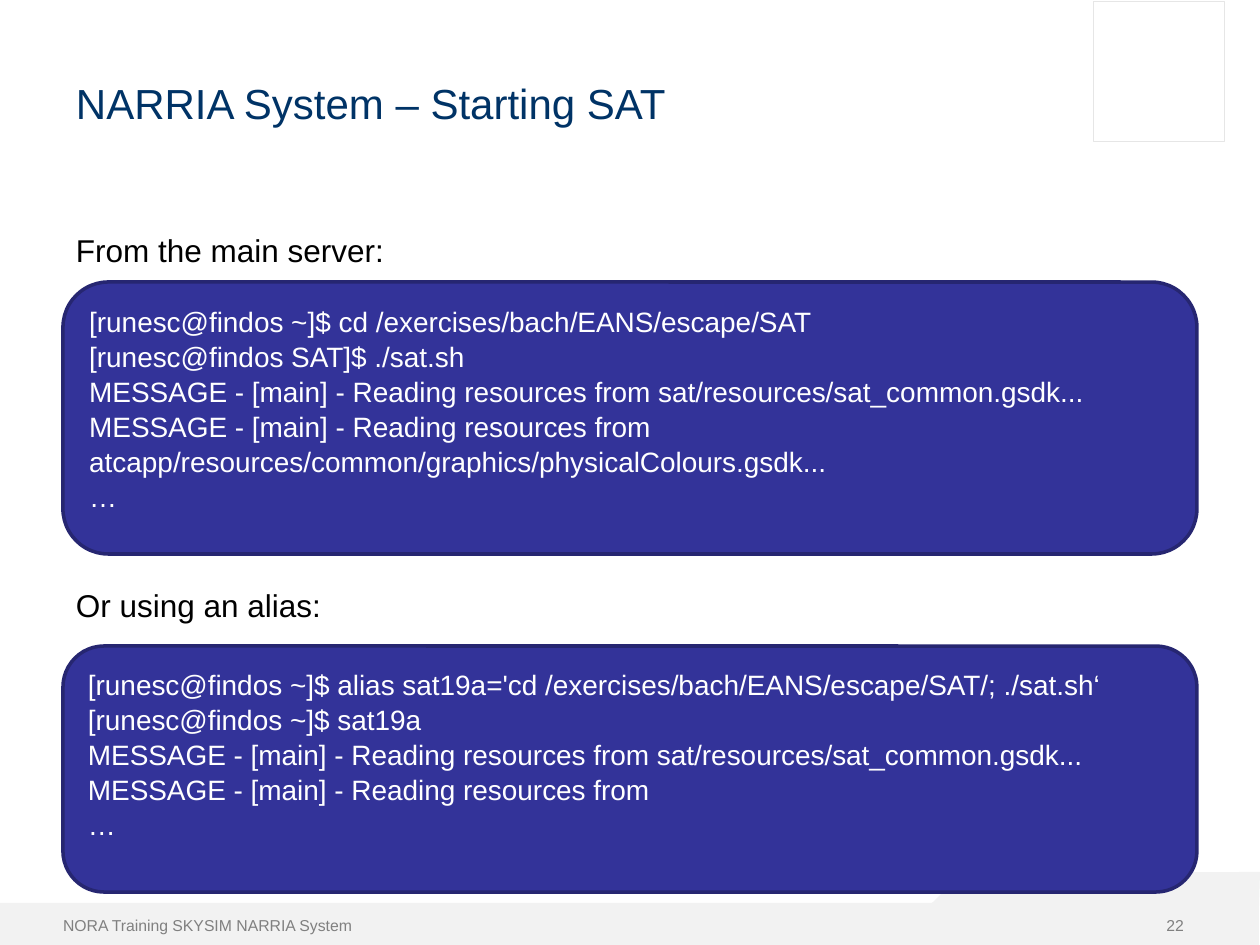
"""Build the slide on starting SAT from a terminal."""
from dataclasses import dataclass

from pptx import Presentation
from pptx.dml.color import RGBColor
from pptx.enum.shapes import MSO_SHAPE
from pptx.enum.text import MSO_ANCHOR, PP_ALIGN
from pptx.util import Emu, Pt

EMU_PER_PX = 914400 / 126


def px(length):
    return Emu(round(length * EMU_PER_PX))


@dataclass(frozen=True)
class Theme:
    font: str = "Arial"
    title: str = "003366"
    body: str = "000000"
    muted: str = "808080"
    band: str = "F2F2F2"
    paper: str = "FFFFFF"
    frame: str = "E6E6E6"
    terminal: str = "333399"
    terminal_edge: str = "262671"
    title_size: int = 24
    body_size: int = 18
    code_size: int = 16
    footer_size: int = 9


class SlideBuilder:
    def __init__(self, presentation, theme):
        self.theme = theme
        self.slide = presentation.slides.add_slide(presentation.slide_layouts[5])

    def fill_text(self, shape, lines, size, color, margins, anchor=MSO_ANCHOR.TOP,
                  align=PP_ALIGN.LEFT, gap=0, spacing=1.0):
        frame = shape.text_frame
        frame.word_wrap = True
        frame.vertical_anchor = anchor
        frame.margin_left, frame.margin_top, frame.margin_right, frame.margin_bottom = map(px, margins)
        for index, line in enumerate(lines):
            paragraph = frame.add_paragraph() if index else frame.paragraphs[0]
            paragraph.alignment = align
            paragraph.line_spacing = spacing
            paragraph.space_before = px(gap if index else 0)
            run = paragraph.add_run()
            run.text = line
            run.font.name = self.theme.font
            run.font.size = Pt(size)
            run.font.color.rgb = RGBColor.from_string(color)

    def paint(self, shape, fill, line=None, width=0):
        shape.shadow.inherit = False
        shape.fill.solid()
        shape.fill.fore_color.rgb = RGBColor.from_string(fill)
        if line:
            shape.line.color.rgb = RGBColor.from_string(line)
            shape.line.width = Pt(width)
        else:
            shape.line.fill.background()

    def box(self, kind, bounds, fill, line=None, width=0):
        shape = self.slide.shapes.add_shape(kind, *map(px, bounds))
        self.paint(shape, fill, line, width)
        return shape

    def polygon(self, points, fill):
        first, *rest = [(px(x), px(y)) for x, y in points]
        builder = self.slide.shapes.build_freeform(*first)
        builder.add_line_segments(rest)
        self.paint(builder.convert_to_shape(), fill)

    def title(self, bounds, text):
        shape = self.slide.shapes.title
        shape.left, shape.top, shape.width, shape.height = map(px, bounds)
        self.fill_text(shape, [text], self.theme.title_size, self.theme.title, (13, 12, 13, 6))

    def text(self, bounds, lines, size, color, margins=(13, 6, 13, 6), **layout):
        shape = self.slide.shapes.add_textbox(*map(px, bounds))
        self.fill_text(shape, lines, size, color, margins, **layout)

    def terminal(self, top, height, lines):
        shape = self.box(MSO_SHAPE.ROUNDED_RECTANGLE, (63, top, 1134, height),
                         self.theme.terminal, self.theme.terminal_edge, 2)
        self.fill_text(shape, lines, self.theme.code_size, self.theme.paper,
                       (13, 8, 13, 6), spacing=1.04)


def main():
    presentation = Presentation()
    presentation.slide_width, presentation.slide_height = px(1260), px(945)
    theme = Theme()
    builder = SlideBuilder(presentation, theme)

    builder.box(MSO_SHAPE.RECTANGLE, (0, 903, 1259, 42), theme.band)
    builder.polygon([(929, 906), (1259, 907), (1260, 872), (963, 873)], theme.band)
    builder.box(MSO_SHAPE.RECTANGLE, (1093, 1, 131, 140), theme.paper, theme.frame, 0.25)

    builder.title((63, 65, 942, 107), "NARRIA System – Starting SAT")
    builder.text((63, 223, 1134, 621), ["From the main server:", "Or using an alias:"],
                 theme.body_size, theme.body, margins=(13, 8, 13, 6), gap=317)

    builder.text((63, 906, 575, 38), ["NORA Training SKYSIM NARRIA System"],
                 theme.footer_size, theme.muted, margins=(0, 6, 13, 6), anchor=MSO_ANCHOR.MIDDLE)
    builder.text((1131, 906, 66, 38), ["22"], theme.footer_size, theme.muted,
                 anchor=MSO_ANCHOR.MIDDLE, align=PP_ALIGN.RIGHT)

    message = "MESSAGE - [main] - Reading resources from"
    common = f"{message} sat/resources/sat_common.gsdk..."
    builder.terminal(282, 272, [
        "[runesc@findos ~]$ cd /exercises/bach/EANS/escape/SAT",
        "[runesc@findos SAT]$ ./sat.sh",
        common,
        f"{message} atcapp/resources/common/graphics/physicalColours.gsdk...",
        "…",
    ])
    builder.terminal(646, 246, [
        "[runesc@findos ~]$ alias sat19a='cd /exercises/bach/EANS/escape/SAT/; ./sat.sh‘",
        "[runesc@findos ~]$ sat19a",
        common,
        message,
        "…",
    ])
    presentation.save("out.pptx")


if __name__ == "__main__":
    main()
